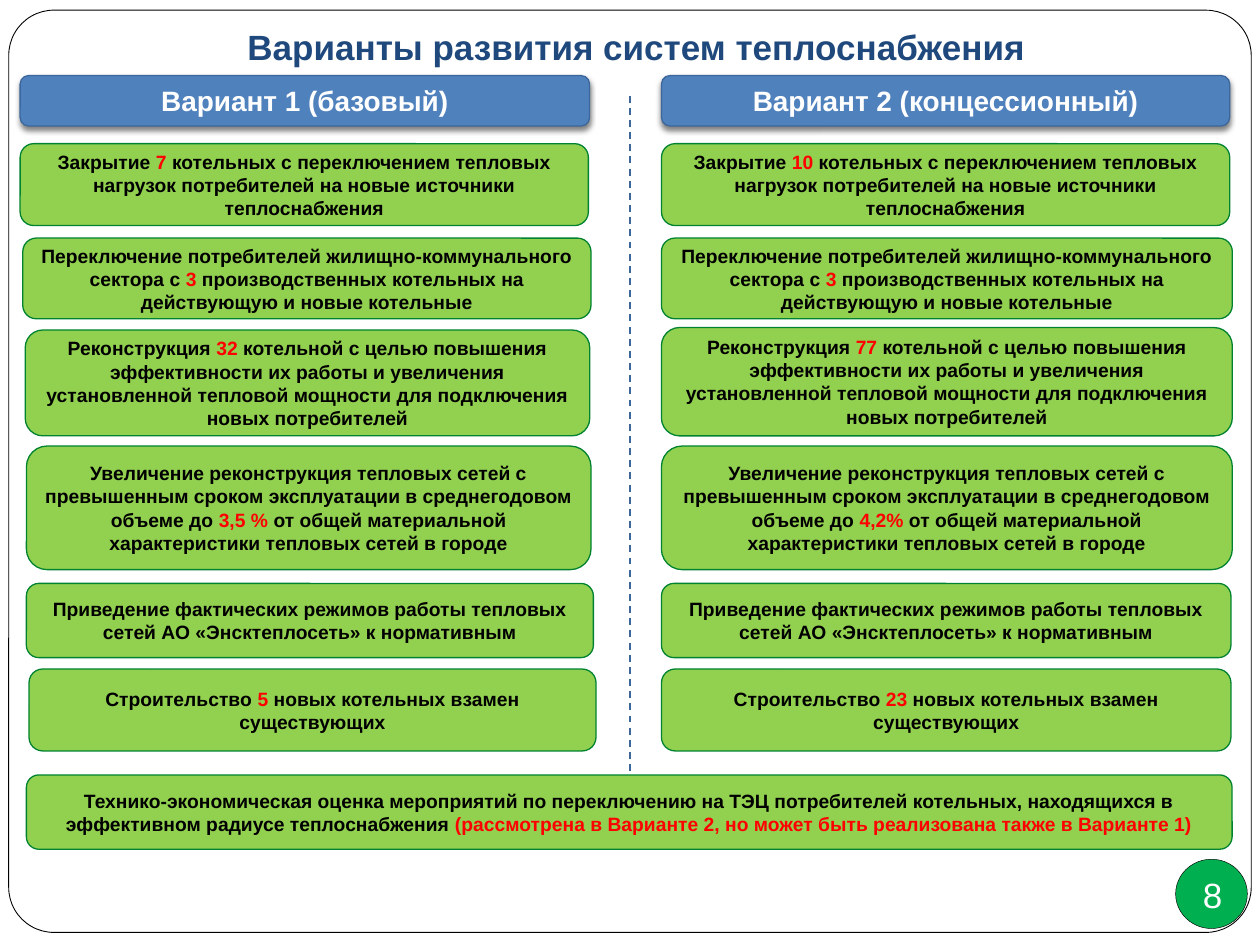
from lxml.etree import SubElement as Sub
from pptx import Presentation
from pptx.dml.color import RGBColor
from pptx.enum.dml import MSO_LINE
from pptx.enum.shapes import MSO_CONNECTOR, MSO_SHAPE as Kind
from pptx.enum.text import MSO_ANCHOR as Anchor, PP_ALIGN as Align
from pptx.oxml.ns import qn
from pptx.util import Pt

WHITE = RGBColor(0xFF, 0xFF, 0xFF)
BLACK = RGBColor(0, 0, 0)
RED = RGBColor(0xFF, 0, 0)
NAVY = RGBColor(0x1F, 0x49, 0x7D)
BLUE = RGBColor(0x4F, 0x81, 0xBD)
STEEL = RGBColor(0x3B, 0x67, 0x9C)
LIME = RGBColor(0x92, 0xD0, 0x50)
GREEN = RGBColor(0, 0xB0, 0x50)
PINE = RGBColor(0, 0x83, 0x30)

TITLE = "Варианты развития систем теплоснабжения"
HEADS = [
    ("Вариант 1 (базовый)", 11.5, 325.4),
    ("Вариант 2 (концессионный)", 378, 324.7),
]
STEPS = [
    ("Закрытие ", ("7", "10"),
     " котельных с переключением тепловых нагрузок потребителей на новые источники теплоснабжения"),
    ("Переключение потребителей жилищно-коммунального сектора с ", ("3", "3"),
     " производственных котельных на действующую и новые котельные"),
    ("Реконструкция ", ("32", "77"),
     " котельной с целью повышения эффективности их работы и увеличения"
     " установленной тепловой мощности для подключения новых потребителей"),
    ("Увеличение реконструкция тепловых сетей с превышенным сроком эксплуатации"
     " в среднегодовом объеме до ", ("3,5 %", "4,2%"),
     " от общей материальной характеристики тепловых сетей в городе"),
    ("Приведение фактических режимов работы тепловых сетей"
     " АО «Энсктеплосеть» к нормативным", ("", ""), ""),
    ("Строительство ", ("5", "23"), " новых котельных взамен существующих"),
]
NOTE = [
    ("Технико-экономическая оценка мероприятий по переключению на ТЭЦ потребителей"
     " котельных, находящихся в эффективном радиусе теплоснабжения ", BLACK),
    ("(рассмотрена в Варианте 2, но может быть реализована также в Варианте 1)", RED),
]
ROWS = [(82.1, 128.9), (136.1, 182.2), (188.6, 249.1), (254.9, 325.5), (333.4, 375.8), (382.3, 429.1)]
LEFT = [(11.5, 324.7), (13, 324.7), (14.4, 322.6), (15.1, 322.6), (15.1, 324), (16.6, 324)]
RIGHT = [(378, wide) for wide in (324.7, 326.2, 326.2, 326.2, 325.4, 325.4)]
RAISE = {2: 1.4}

deck = Presentation()
deck.slide_width, deck.slide_height = Pt(720), Pt(540)
slide = deck.slides.add_slide(deck.slide_layouts[6])
shapes = slide.shapes


def write(shape, runs, size, bold=True):
    frame = shape.text_frame
    frame.word_wrap = True
    para = frame.paragraphs[0]
    para.alignment = Align.CENTER
    for text, color in runs:
        if text:
            run = para.add_run()
            run.text = text
            font = run.font
            font.name, font.size, font.bold = "Arial", Pt(size), bold
            font.color.rgb = color
    return frame


def draw(kind, box, fill, edge, width, round=None):
    shape = shapes.add_shape(kind, *map(Pt, box))
    shape.shadow.inherit = False
    shape.fill.solid()
    shape.fill.fore_color.rgb = fill
    shape.line.color.rgb = edge
    shape.line.width = Pt(width)
    if round is not None:
        shape.adjustments[0] = round
    return shape


def card(box, runs, size=11, fill=LIME, edge=PINE):
    shape = draw(Kind.ROUNDED_RECTANGLE, box, fill, edge, 0.75, 0.167)
    write(shape, runs, size).vertical_anchor = Anchor.MIDDLE
    return shape


def shade(shape):
    effects = shape._element.spPr.find(qn("a:effectLst"))
    glow = Sub(effects, qn("a:outerShdw"), blurRad=str(Pt(3)), dist=str(Pt(2)),
               dir="5400000", rotWithShape="0")
    color = Sub(glow, qn("a:srgbClr"), val="000000")
    Sub(color, qn("a:alpha"), val="50000")


draw(Kind.ROUNDED_RECTANGLE, (5, 5.8, 710, 527), WHITE, BLACK, 0.5, 0.049)
title = shapes.add_textbox(Pt(-1.4), Pt(6.5), Pt(730), Pt(48.2))
write(title, [(TITLE, NAVY)], 20).paragraphs[0].line_spacing = 1.2

for text, left, wide in HEADS:
    shade(card((left, 43.2, wide, 28.8), [(text, WHITE)], 16, BLUE, STEEL))

for side, spans in enumerate((LEFT, RIGHT)):
    for row, (start, counts, end) in enumerate(STEPS):
        left, wide = spans[row]
        top, base = ROWS[row]
        top -= side * RAISE.get(row, 0)
        card((left, top, wide, base - top),
             [(start, BLACK), (counts[side], RED), (end, BLACK)])

rule = shapes.add_connector(MSO_CONNECTOR.STRAIGHT, Pt(360), Pt(54.7), Pt(360), Pt(443))
rule.line.color.rgb = STEEL
rule.line.width = Pt(1)
rule.line.dash_style = MSO_LINE.DASH
Sub(rule._element.spPr, qn("a:effectLst"))

card((15.1, 442.8, 689, 42.5), NOTE)

draw(Kind.OVAL, (671.8, 491, 41, 39.6), GREEN, BLACK, 0.25)
badge = shapes.add_shape(Kind.OVAL, Pt(681.8), Pt(499.7), Pt(22.3), Pt(23))
badge.shadow.inherit = False
badge.fill.background()
badge.line.fill.background()
frame = write(badge, [("8", WHITE)], 20, False)
frame.word_wrap = False
frame.vertical_anchor = Anchor.MIDDLE
frame.margin_left = frame.margin_right = frame.margin_top = frame.margin_bottom = 0

deck.save("out.pptx")
